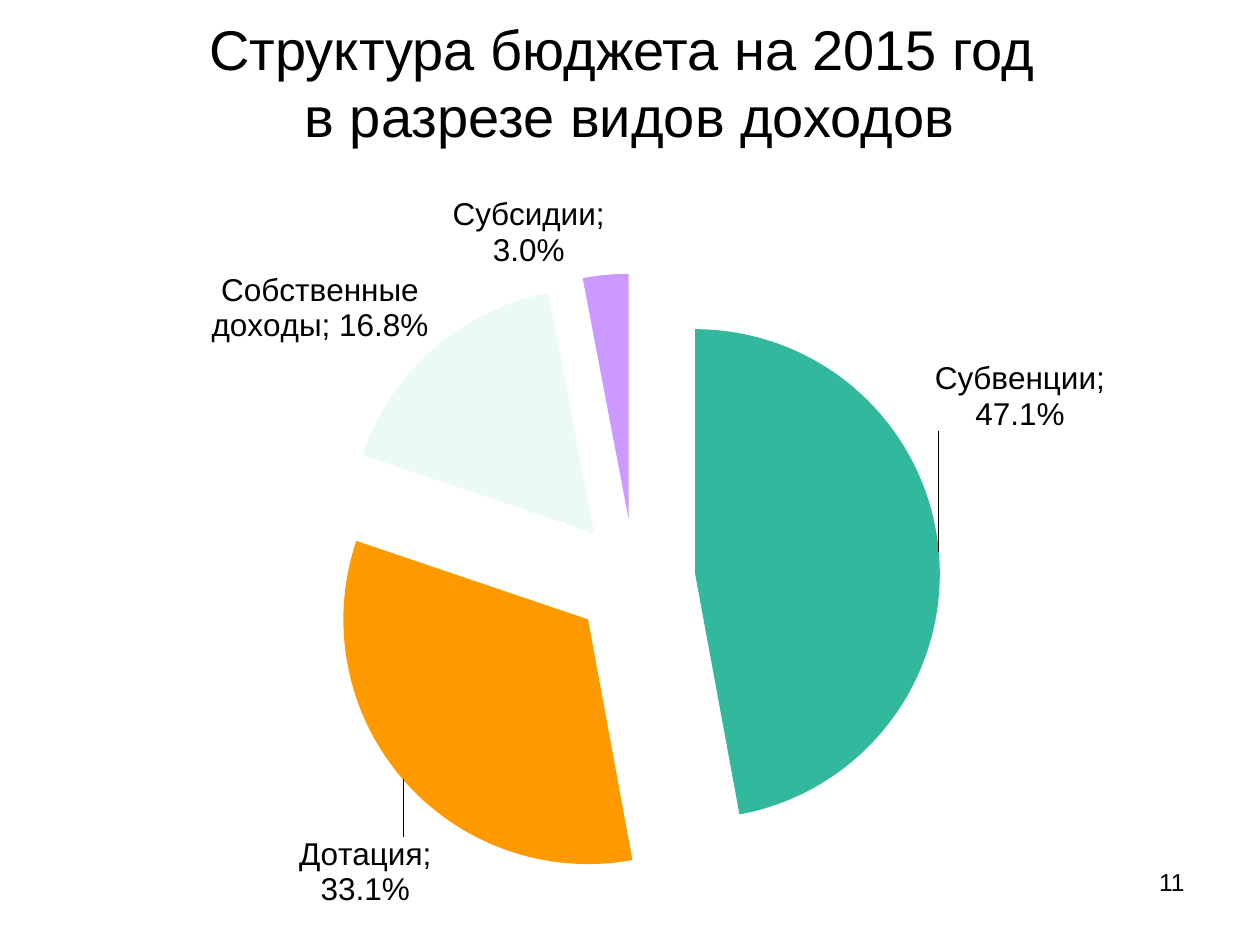
from dataclasses import dataclass
from lxml import etree
from pptx import Presentation
from pptx.chart.data import CategoryChartData
from pptx.dml.color import RGBColor
from pptx.enum.chart import XL_CHART_TYPE as ChartType, XL_LABEL_POSITION as LabelPos
from pptx.enum.text import MSO_ANCHOR as Anchor, PP_ALIGN as Align
from pptx.oxml import parse_xml
from pptx.oxml.ns import nsdecls, qn
from pptx.util import Inches, Pt


@dataclass(frozen=True)
class Theme:
    font: str = "Arial"
    ink: str = "000000"
    title: int = 32
    label: int = 18
    number: int = 14


THEME = Theme()
INCOME = [
    ("Субвенции", 0.471, "32B89C"),
    ("Дотация", 0.331, "FF9900"),
    ("Собственные доходы", 0.168, "ECFAF7"),
    ("Субсидии", 0.03, "CC99FF"),
]
LABEL_SHIFTS = {0: (-0.01, -0.16), 1: (0.03, 0.07)}
PLOT = {"x": 0.225, "y": 0.127, "w": 0.54, "h": 0.82}
EXPLOSION = 25


def style_font(font, size):
    for name, value in {"name": THEME.font, "size": Pt(size)}.items():
        setattr(font, name, value)
    font.color.rgb = RGBColor.from_string(THEME.ink)


def add_text(slide, box, text, size, align, anchor):
    tf = slide.shapes.add_textbox(*map(Inches, box)).text_frame
    for name, value in {"word_wrap": True, "vertical_anchor": anchor}.items():
        setattr(tf, name, value)
    p = tf.paragraphs[0]
    p.text = text
    p.alignment = align
    for r in p.runs:
        style_font(r.font, size)


def manual_layout(values, inner=False):
    layout = parse_xml(f'<c:layout {nsdecls("c")}><c:manualLayout/></c:layout>')
    items = {"layoutTarget": "inner", "xMode": "edge", "yMode": "edge"} if inner else {}
    for tag, value in {**items, **values}.items():
        etree.SubElement(layout[0], qn(f"c:{tag}")).set("val", str(value))
    return layout


def style_labels(plot):
    plot.has_data_labels = True
    labels = plot.data_labels
    settings = {
        "show_value": True,
        "show_category_name": True,
        "show_percentage": False,
        "show_legend_key": False,
        "number_format": "0.0%",
        "number_format_is_linked": False,
        "position": LabelPos.OUTSIDE_END,
    }
    for name, value in settings.items():
        setattr(labels, name, value)
    style_font(labels.font, THEME.label)
    flags = "".join(
        f'<c:{tag} val="{val}"/>'
        for tag, val in [("showLegendKey", 0), ("showVal", 1), ("showCatName", 1),
                         ("showSerName", 0), ("showPercent", 0), ("showBubbleSize", 0)]
    )
    tail = f'<c:dLblPos val="outEnd"/>{flags}<c:separator>; </c:separator>'
    fmt = '<c:numFmt formatCode="0.0%" sourceLinked="0"/>'
    ser_labels = parse_xml(
        f'<c:dLbls {nsdecls("c")}>{fmt}{tail}<c:showLeaderLines val="1"/></c:dLbls>'
    )
    text_props = labels._element.find(qn("c:txPr"))
    ser_labels.insert(1, text_props)
    for i, (x, y) in reversed(LABEL_SHIFTS.items()):
        label = parse_xml(
            f'<c:dLbl {nsdecls("c")}><c:idx val="{i}"/>{fmt}{tail}</c:dLbl>'
        )
        label.insert(1, manual_layout({"x": x, "y": y}))
        ser_labels.insert(0, label)
    ser = plot.series[0]._element
    ser.find(qn("c:cat")).addprevious(ser_labels)
    plot.has_data_labels = False


def add_income_pie(slide, box):
    data = CategoryChartData(number_format="0.0%")
    data.categories = [name for name, _, _ in INCOME]
    data.add_series("Series 1", [share for _, share, _ in INCOME])
    chart = slide.shapes.add_chart(ChartType.PIE, *map(Inches, box), data).chart
    for name in ("has_title", "has_legend"):
        setattr(chart, name, False)
    style_font(chart.font, THEME.label)
    plot = chart.plots[0]
    plot.vary_by_categories = True
    series = plot.series[0]
    for i, (_, _, color) in enumerate(INCOME):
        fmt = series.points[i].format
        fmt.fill.solid()
        fmt.fill.fore_color.rgb = RGBColor.from_string(color)
        fmt.line.fill.background()
    explosion = parse_xml(f'<c:explosion {nsdecls("c")} val="{EXPLOSION}"/>')
    series._element.find(qn("c:dPt")).addprevious(explosion)
    style_labels(plot)
    area = chart._chartSpace.find(f'.//{qn("c:plotArea")}')
    for old in area.findall(qn("c:layout")):
        area.remove(old)
    area.insert(0, manual_layout(PLOT, inner=True))


def main():
    prs = Presentation()
    prs.slide_width, prs.slide_height = Inches(10), Inches(7.5)
    slide = prs.slides.add_slide(prs.slide_layouts[6])
    add_text(slide, (0.5, 0.3, 9, 0.7), "Структура бюджета на 2015 год \vв разрезе видов доходов",
             THEME.title, Align.CENTER, Anchor.MIDDLE)
    add_income_pie(slide, (0.58, 1.42, 9, 5.92))
    add_text(slide, (7.17, 6.83, 2.33, 0.52), "11", THEME.number, Align.RIGHT, Anchor.TOP)
    prs.save("out.pptx")


if __name__ == "__main__":
    main()
